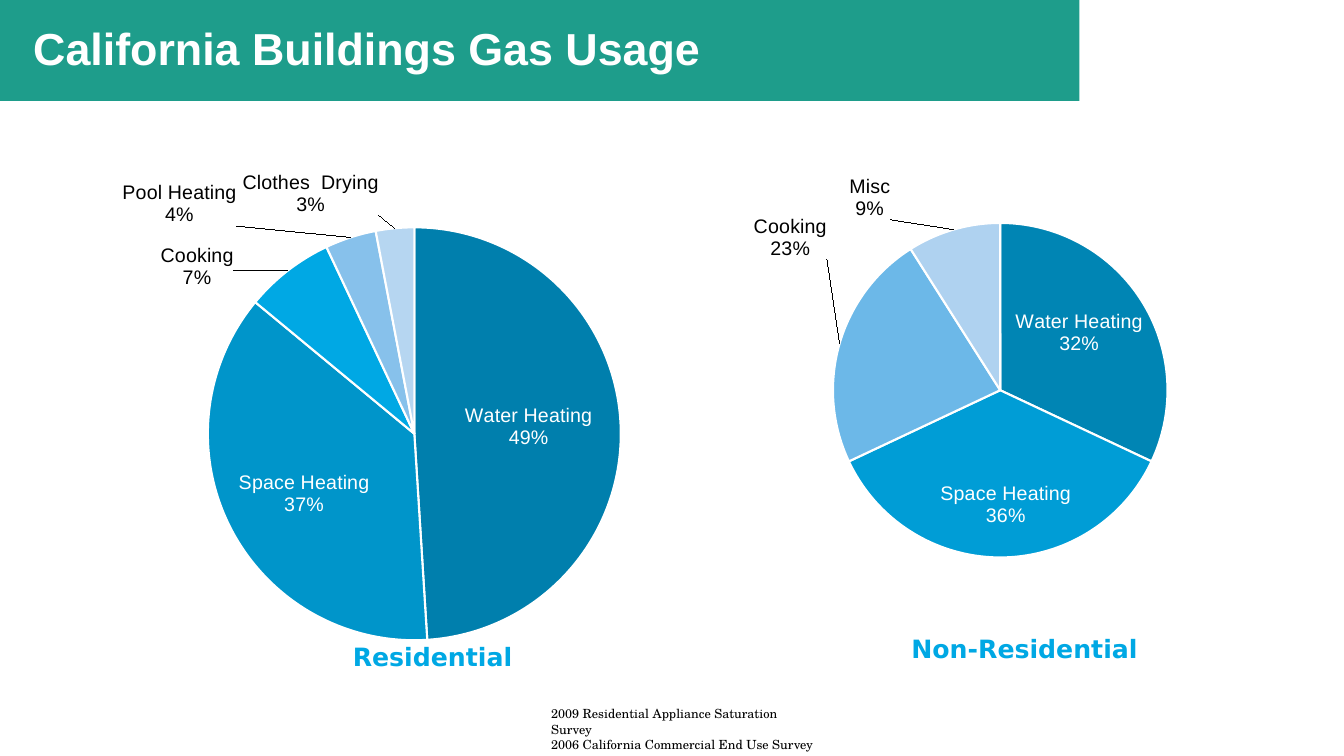
from lxml import etree
from pptx import Presentation, util as u
from pptx.chart.data import CategoryChartData
from pptx.dml.color import RGBColor
from pptx.enum import chart as ch, shapes, text
from pptx.oxml.ns import qn

TEAL = RGBColor(0x1E, 0x9D, 0x8B)
SKY = RGBColor(0x00, 0xA8, 0xE4)
WHITE = RGBColor(0xFF, 0xFF, 0xFF)
BLACK = RGBColor(0x00, 0x00, 0x00)

# Each slice: name, percent, fill, label shift in points, label inside the slice
RESIDENTIAL = [
    ("Water Heating", 49, RGBColor(0x00, 0x7F, 0xAD), (8, -3), True),
    ("Space Heating", 37, RGBColor(0x00, 0x95, 0xCA), (-13, 9), True),
    ("Cooking", 7, SKY, (-36, 16), False),
    ("Pool Heating", 4, RGBColor(0x87, 0xC1, 0xEB), (-80, -4), False),
    ("Clothes  Drying", 3, RGBColor(0xB6, 0xD6, 0xF1), (-11, -5), False),
]
NON_RESIDENTIAL = [
    ("Water Heating", 32, RGBColor(0x00, 0x85, 0xB4), (6, -9), True),
    ("Space Heating", 36, RGBColor(0x00, 0x9D, 0xD6), (4, 22), True),
    ("Cooking", 23, RGBColor(0x6C, 0xB8, 0xE8), (-5, -59), False),
    ("Misc", 9, RGBColor(0xAF, 0xD2, 0xF0), (-44, -3), False),
]
SOURCES = ["2009 Residential Appliance Saturation Survey",
           "2006 California Commercial End Use Survey"]


def set_font(font, name, size, color, bold=False):
    font.name, font.size, font.bold = name, u.Pt(size), bold
    font.color.rgb = color


def place(shape, left, top, width, height):
    shape.left, shape.top = u.Pt(left), u.Pt(top)
    shape.width, shape.height = u.Pt(width), u.Pt(height)


def manual_layout(**values):
    """Return a c:layout element with the given children, in order."""
    layout = etree.Element(qn("c:layout"))
    manual = etree.SubElement(layout, qn("c:manualLayout"))
    for tag, value in values.items():
        etree.SubElement(manual, qn("c:" + tag)).set("val", str(value))
    return layout


def add_header(page, left, top, width, height):
    banner = page.shapes.add_shape(shapes.MSO_SHAPE.RECTANGLE, *map(u.Pt, (left, top, width, height)))
    banner.shadow.inherit = False
    banner.fill.solid()
    banner.fill.fore_color.rgb = TEAL
    banner.line.fill.background()
    title = page.shapes.title
    title.element.addprevious(banner.element)
    place(title, left + 16.5, top + 16.5, 548, 50.5)
    frame = title.text_frame
    frame.text = "California Buildings Gas Usage"
    frame.auto_size = text.MSO_AUTO_SIZE.NONE
    frame.vertical_anchor = text.MSO_ANCHOR.TOP
    para = frame.paragraphs[0]
    para.alignment = text.PP_ALIGN.LEFT
    para.line_spacing = 0.9
    para.space_before = u.Pt(0)
    set_font(para.font, "Arial", 32, WHITE, True)


def add_pie(page, left, top, width, height, slices, pie_left, pie_top, diameter):
    """Chart in the given box; the pie is placed relative to that box."""
    data = CategoryChartData()
    data.categories = [item[0] for item in slices]
    data.add_series("Series 1", [item[1] for item in slices])
    chart = page.shapes.add_chart(ch.XL_CHART_TYPE.PIE, *map(u.Pt, (left, top, width, height)),
                                  data).chart
    chart.has_legend = chart.has_title = False
    set_font(chart.font, "Arial", 14, BLACK)
    plot = chart.plots[0]
    plot.vary_by_categories = True
    series = plot.series[0]
    labels = series.data_labels
    labels.show_value = False
    labels.show_category_name = labels.show_percentage = True
    set_font(labels.font, "Arial", 14, BLACK)

    for index, (_, _, color, _, inside) in enumerate(slices):
        point = series.points[index]
        point.format.fill.solid()
        point.format.fill.fore_color.rgb = color
        point.format.line.color.rgb = WHITE
        point.format.line.width = u.Pt(1.5)
        label = point.data_label
        set_font(label.font, "Arial", 14, WHITE if inside else BLACK)
        position = ch.XL_LABEL_POSITION
        label.position = position.CENTER if inside else position.OUTSIDE_END

    root = chart.element
    for element, item in zip(root.iter(qn("c:dLbl")), slices):
        shift_x, shift_y = item[3]
        element.find(qn("c:idx")).addnext(manual_layout(x=shift_x / width, y=shift_y / height))
        for tag, shown in (("showVal", "0"), ("showCatName", "1"), ("showPercent", "1")):
            element.find(qn("c:" + tag)).set("val", shown)
        etree.SubElement(element, qn("c:separator")).text = "\n"

    area = root.find(".//" + qn("c:plotArea"))
    for old in area.findall(qn("c:layout")):
        area.remove(old)
    area.insert(0, manual_layout(layoutTarget="inner", xMode="edge", yMode="edge",
                                 x=pie_left / width, y=pie_top / height,
                                 w=diameter / width, h=diameter / height))


def add_caption(page, left, top, width, height, words):
    box = page.shapes.add_textbox(*map(u.Pt, (left, top, width, height)))
    frame = box.text_frame
    frame.word_wrap = False
    frame.margin_left = frame.margin_right = frame.margin_top = frame.margin_bottom = 0
    para = frame.paragraphs[0]
    para.text = words
    para.line_spacing = 1.13
    set_font(para.font, "DejaVu Sans", 18, SKY, True)


def add_sources(page, left, top, width, height):
    frame = page.shapes.add_textbox(*map(u.Pt, (left, top, width, height))).text_frame
    frame.word_wrap = True
    for index, line in enumerate(SOURCES):
        para = frame.add_paragraph() if index else frame.paragraphs[0]
        para.text = line
        set_font(para.font, "TeX Gyre Schola", 9, BLACK)


def main():
    deck = Presentation()
    deck.slide_width, deck.slide_height = u.Pt(960), u.Pt(540)
    page = deck.slides.add_slide(deck.slide_layouts.get_by_name("Title Only"))
    add_header(page, 0, -0.7, 771, 72.7)
    add_pie(page, 6.5, 116.6, 585.4, 351.4, RESIDENTIAL, 142, 45.8, 295)
    add_pie(page, 512.6, 116.6, 391.7, 343.4, NON_RESIDENTIAL, 82.4, 42.7, 239)
    add_caption(page, 252, 455, 114, 22.3, "Residential")
    add_caption(page, 651, 449.3, 163.4, 22.3, "Non-Residential")
    add_sources(page, 386.6, 501, 205.2, 29)
    deck.save("out.pptx")


if __name__ == "__main__":
    main()
